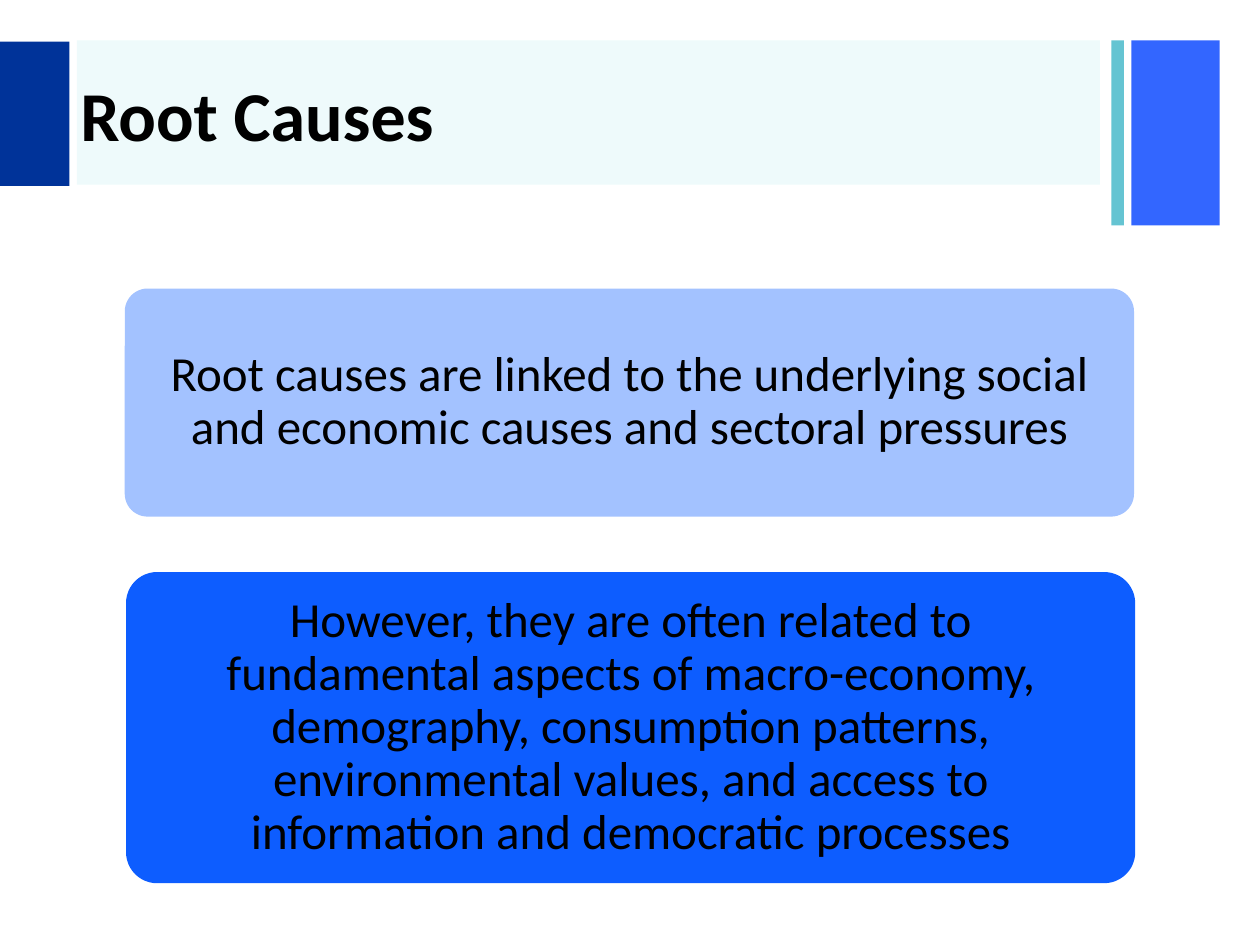
from lxml.etree import SubElement
from pptx import Presentation
from pptx.dml.color import RGBColor
from pptx.enum.shapes import MSO_SHAPE
from pptx.enum.text import MSO_ANCHOR, PP_ALIGN
from pptx.oxml.ns import qn
from pptx.util import Inches, Pt

SLIDE_WIDTH = Inches(10)
SLIDE_HEIGHT = Inches(7.5)
COLUMN = SLIDE_WIDTH / 100
ROW = SLIDE_HEIGHT / 75

BLACK = RGBColor(0x00, 0x00, 0x00)
NAVY = RGBColor(0x00, 0x33, 0x99)
ROYAL_BLUE = RGBColor(0x33, 0x66, 0xFF)
TEAL = RGBColor(0x65, 0xC4, 0xD2)
AQUA = RGBColor(0x14, 0xC5, 0xD0)
PALE_BLUE = RGBColor(0xA3, 0xC2, 0xFF)
BRIGHT_BLUE = RGBColor(0x0D, 0x5D, 0xFF)

CARDS = [
    ((9.9, 22.9, 80.1, 18.1), PALE_BLUE,
     "Root causes are linked to the underlying social and economic causes "
     "and sectoral pressures"),
    ((10, 45.4, 80.1, 24.7), BRIGHT_BLUE,
     "However, they are often related to fundamental aspects of macro-economy, "
     "demography, consumption patterns, environmental values, and access to "
     "information and democratic processes"),
]


def to_lengths(box):
    left, top, width, height = box
    return (round(left * COLUMN), round(top * ROW),
            round(width * COLUMN), round(height * ROW))


def add_block(slide, box, color, kind=MSO_SHAPE.RECTANGLE):
    shape = slide.shapes.add_shape(kind, *to_lengths(box))
    shape.shadow.inherit = False
    shape.fill.solid()
    shape.fill.fore_color.rgb = color
    shape.line.fill.background()
    return shape


def set_opacity(shape, percent):
    color = shape.fill._xPr.find(qn("a:solidFill"))[0]
    SubElement(color, qn("a:alpha"), val=str(percent * 1000))


def write_text(shape, text, size, alignment, bold=False):
    frame = shape.text_frame
    frame.word_wrap = True
    frame.vertical_anchor = MSO_ANCHOR.MIDDLE
    paragraph = frame.paragraphs[0]
    paragraph.text = text
    paragraph.alignment = alignment
    paragraph.font.name = "Calibri"
    paragraph.font.size = Pt(size)
    paragraph.font.bold = bold
    paragraph.font.color.rgb = BLACK
    return paragraph


def add_header(slide, box, title):
    left, top, width, height = box
    bar_height = height * 0.78
    right = left + width
    add_block(slide, (right - 7, top, 7, height), ROYAL_BLUE)
    add_block(slide, (right - 8.6, top, 1, height), TEAL)
    band = add_block(slide, (left + 6.1, top, 81.2, bar_height), AQUA)
    set_opacity(band, 7)
    add_block(slide, (left, top + 0.1, 5.5, bar_height), NAVY)
    title_box = slide.shapes.add_textbox(
        *to_lengths((left + 5.4, top + 0.2, 82.7, bar_height - 0.3)))
    write_text(title_box, title, 40, PP_ALIGN.LEFT, bold=True)


def add_card(slide, box, color, text):
    card = add_block(slide, box, color, MSO_SHAPE.ROUNDED_RECTANGLE)
    card.adjustments[0] = 0.1
    frame = card.text_frame
    frame.margin_left = frame.margin_right = Inches(0.21)
    frame.margin_top = frame.margin_bottom = Inches(0.15)
    paragraph = write_text(card, text, 28, PP_ALIGN.CENTER)
    paragraph.line_spacing = 0.9


def main():
    presentation = Presentation()
    presentation.slide_width = SLIDE_WIDTH
    presentation.slide_height = SLIDE_HEIGHT
    slide = presentation.slides.add_slide(presentation.slide_layouts[6])
    add_header(slide, (0, 3.2, 96.8, 14.7), "Root Causes")
    for box, color, text in CARDS:
        add_card(slide, box, color, text)
    presentation.save("out.pptx")


if __name__ == "__main__":
    main()
